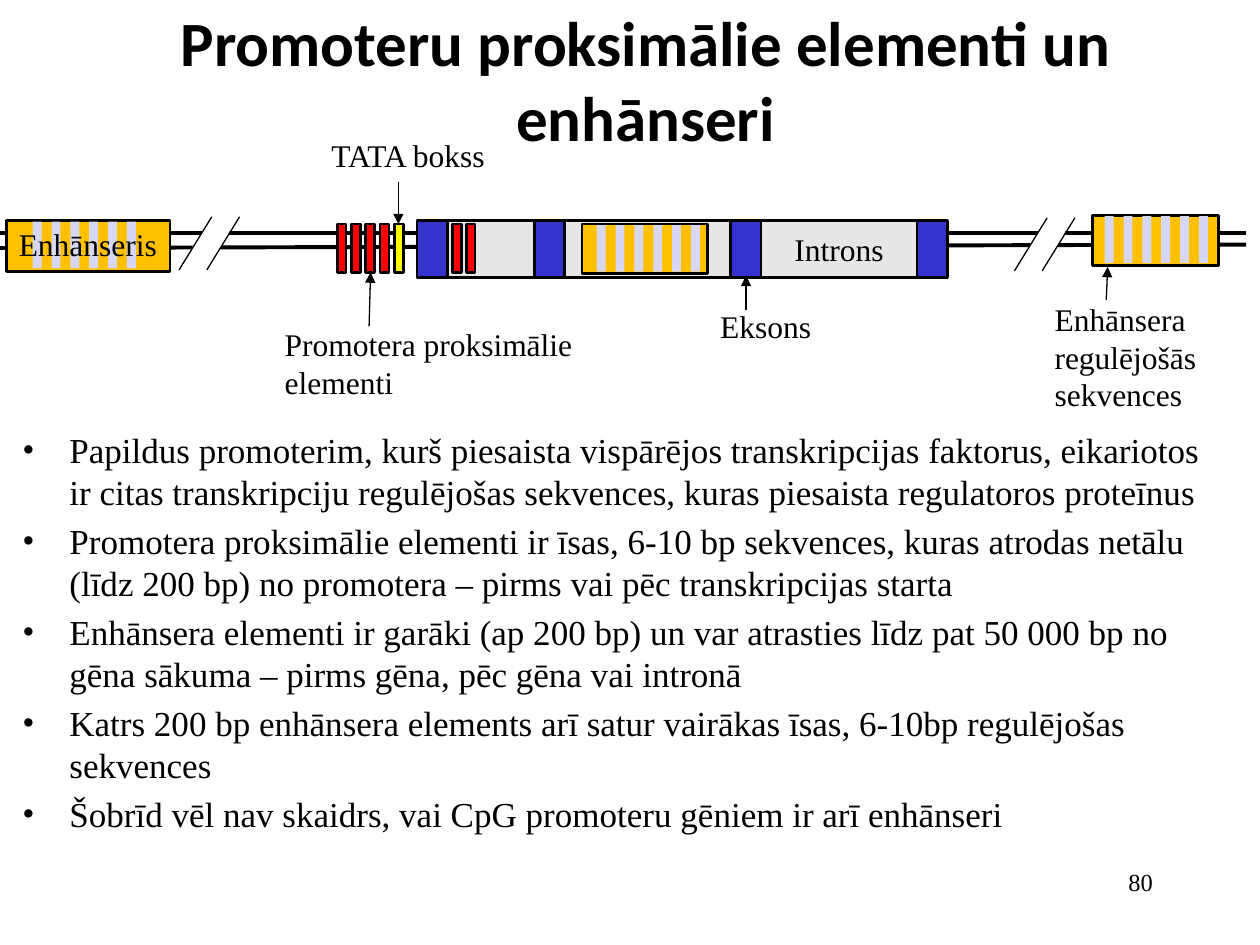
import pptx
import pptx.util
import pptx.dml.color
import pptx.enum.shapes
import pptx.enum.text
import pptx.oxml
import pptx.oxml.ns
from lxml import etree

Cm = pptx.util.Cm
Pt = pptx.util.Pt
RGBColor = pptx.dml.color.RGBColor
ALIGN = pptx.enum.text.PP_ALIGN
MIDDLE = pptx.enum.text.MSO_ANCHOR.MIDDLE
RECT = pptx.enum.shapes.MSO_SHAPE.RECTANGLE
STRAIGHT = pptx.enum.shapes.MSO_CONNECTOR.STRAIGHT
qn = pptx.oxml.ns.qn

BLACK = RGBColor(0, 0, 0)
WHITE = RGBColor(255, 255, 255)
GREY = RGBColor(0xE6, 0xE6, 0xE6)
BLUE = RGBColor(0x33, 0x33, 0xCC)
GOLD = RGBColor(0xFF, 0xC0, 0)
LILAC = RGBColor(0xD6, 0xD6, 0xF5)
RED = RGBColor(255, 0, 0)
YELLOW = RGBColor(255, 255, 0)
SERIF = "Times New Roman"

POINTS = [
    "Papildus promoterim, kurš piesaista vispārējos transkripcijas faktorus, eikariotos ir citas "
    "transkripciju regulējošas sekvences, kuras piesaista regulatoros proteīnus",
    "Promotera proksimālie elementi ir īsas, 6-10 bp sekvences, kuras atrodas netālu (līdz 200 bp) "
    "no promotera – pirms vai pēc transkripcijas starta",
    "Enhānsera elementi ir garāki (ap 200 bp) un var atrasties līdz pat 50 000 bp no gēna sākuma – "
    "pirms gēna, pēc gēna vai intronā",
    "Katrs 200 bp enhānsera elements arī satur vairākas īsas, 6-10bp regulējošas sekvences",
    "Šobrīd vēl nav skaidrs, vai CpG promoteru gēniem ir arī enhānseri",
]


def style(para, size, face=SERIF, bold=False, align=ALIGN.LEFT):
    para.alignment = align
    para.font.size = Pt(size)
    para.font.name = face
    para.font.bold = bold
    para.font.color.rgb = BLACK


def label(slide, box, text, size=18, **looks):
    frame = slide.shapes.add_textbox(*map(Cm, box)).text_frame
    frame.word_wrap = True
    frame.text = text
    style(frame.paragraphs[0], size, **looks)
    return frame


def block(slide, box, fill, edged=True):
    shape = slide.shapes.add_shape(RECT, *map(Cm, box))
    shape.shadow.inherit = False
    shape.fill.solid()
    shape.fill.fore_color.rgb = fill
    if edged:
        shape.line.color.rgb = BLACK
        shape.line.width = Pt(1.5)
    else:
        shape.line.fill.background()
    return shape


def stroke(slide, start, end, width=0.75, arrow=False):
    line = slide.shapes.add_connector(STRAIGHT, *map(Cm, start + end))
    line.line.color.rgb = BLACK
    line.line.width = Pt(width)
    if arrow:
        etree.SubElement(line.line._get_or_add_ln(), qn("a:tailEnd"), type="triangle")
    etree.SubElement(line._element.spPr, qn("a:effectLst"))


def title(slide, box):
    frame = label(slide, box, "Promoteru proksimālie elementi un enhānseri", 36,
                  face="Calibri", bold=True, align=ALIGN.CENTER)
    frame.vertical_anchor = MIDDLE


def strands(slide, box):
    left, top, width, height = box
    stroke(slide, (left, top), (left + width, top), 2.25)
    stroke(slide, (left, top + height), (left + width, top + height - 0.07), 2.25)


def gene(slide, box):
    """Exons at fixed offsets, with an intron filling each gap."""
    left, top, width, height = box
    exon = 0.61
    starts = [left, left + 2.36, left + 6.32, left + width - exon]
    for start, end in zip(starts, starts[1:]):
        intron = block(slide, (start + exon, top, end - start - exon, height), GREY)
    intron.text_frame.text = "Introns"
    intron.text_frame.vertical_anchor = MIDDLE
    style(intron.text_frame.paragraphs[0], 18, align=ALIGN.CENTER)
    for start in starts:
        block(slide, (start, top, exon, height), BLUE)


def enhancer(slide, box, inset):
    """Gold box with six stripes, the first one inset from the left."""
    left, top = box[:2]
    block(slide, box, GOLD)
    for i in range(6):
        block(slide, (left + inset + i * 0.38, top + 0.02, 0.18, 0.94), LILAC, edged=False)


def gap(slide, box):
    """White cut through the strands between two slanted strokes."""
    left, top, width, height = box
    corners = [(1.12, 0.03), (0.61, 0.97), (0.1, 0.94), (0.69, 0.03)]
    spots = [(Cm(left + x), Cm(top + y)) for x, y in corners]
    outline = slide.shapes.build_freeform(*spots[0])
    outline.add_line_segments(spots[1:])
    cut = outline.convert_to_shape()
    cut.shadow.inherit = False
    cut.fill.solid()
    cut.fill.fore_color.rgb = WHITE
    cut.line.color.rgb = WHITE
    cut.line.width = Pt(2)
    lean = 0.66
    for foot in (left, left + width - lean):
        stroke(slide, (foot + lean, top), (foot, top + height))


def motifs(slide, box, fills):
    left, top, width, height = box
    bar = 0.18
    step = (width - bar) / (len(fills) - 1)
    for i, fill in enumerate(fills):
        block(slide, (left + i * step, top, bar, height), fill)


def bullets(slide, box):
    frame = slide.shapes.add_textbox(*map(Cm, box)).text_frame
    frame.word_wrap = True
    for i, point in enumerate(POINTS):
        para = frame.add_paragraph() if i else frame.paragraphs[0]
        para.text = point
        props = para._p.get_or_add_pPr()
        props.set("marL", str(Cm(0.95)))
        props.set("indent", str(Cm(-0.95)))
        etree.SubElement(props, qn("a:buFont"), typeface=SERIF)
        etree.SubElement(props, qn("a:buChar"), char="•")
        para.space_before = Pt(4 if i else 0)
        style(para, 20)


def main():
    deck = pptx.Presentation()
    deck.slide_width, deck.slide_height = Cm(25.4), Cm(19.05)
    slide = deck.slides.add_slide(deck.slide_layouts[6])

    title(slide, (0.91, 0, 24.21, 3.18))
    bullets(slide, (0.2, 8.51, 24.59, 11.43 - 0.9))
    label(slide, (18.21, 17.35, 5.28, 1.27), "80", 14, align=ALIGN.RIGHT)

    strands(slide, (0, 4.7, 25.12, 0.3))
    gene(slide, (8.41, 4.45, 10.69, 1.14))
    enhancer(slide, (0.13, 4.45, 3.3, 1.02), 0.53)
    enhancer(slide, (11.73, 4.52, 2.54, 0.99), 0.3)
    enhancer(slide, (22.02, 4.34, 2.54, 1.02), 0.25)
    gap(slide, (3.61, 4.37, 1.22, 1.07))
    gap(slide, (20.45, 4.39, 1.22, 1.07))
    motifs(slide, (6.8, 4.52, 1.33, 0.97), [RED] * 4 + [YELLOW])
    motifs(slide, (9.12, 4.52, 0.46, 0.97), [RED] * 2)

    label(slide, (0.13, 4.42, 3.4, 1.02), "Enhānseris")
    notes = [
        ("TATA bokss", (6.43, 2.62, 4.6, 1.02), (8.03, 3.66), (8.03, 4.52)),
        ("Promotera proksimālie elementi", (5.49, 6.43, 6.45, 1.8), (7.44, 6.58), (7.47, 5.49)),
        ("Eksons", (14.27, 6.07, 3.91, 1.02), (15.04, 6.25), (15.04, 5.56)),
        ("Enhānsera regulējošās sekvences", (21.01, 5.92, 4.39, 2.57), (22.3, 6.05), (22.33, 5.38)),
    ]
    for text, box, start, end in notes:
        label(slide, box, text)
        stroke(slide, start, end, arrow=True)

    deck.save("out.pptx")


if __name__ == "__main__":
    main()
